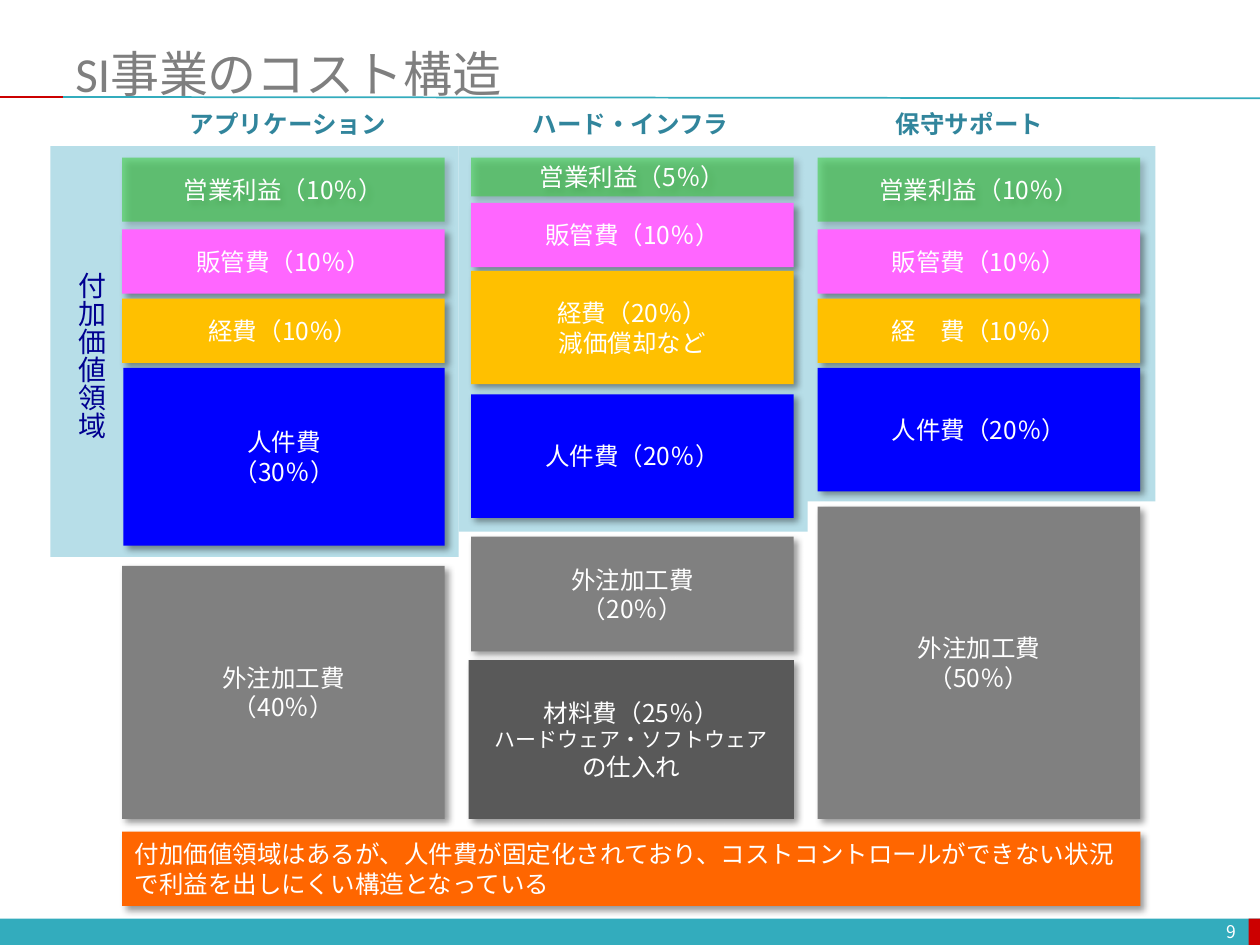
from lxml import etree
from pptx import Presentation
from pptx.dml.color import RGBColor
from pptx.enum.shapes import MSO_CONNECTOR, MSO_SHAPE
from pptx.enum.text import MSO_ANCHOR, PP_ALIGN
from pptx.oxml import parse_xml
from pptx.oxml.ns import nsdecls, qn
from pptx.util import Inches, Pt

COLOURS = {
    "teal": "33ACBD", "red": "CC0000", "region": "B7DEE8", "white": "FFFFFF",
    "title": "7F7F7F", "heading": "31859C", "navy": "000090",
    "profit": "33CC33", "admin": "FF66FF", "expense": "FFC000",
    "labour": "0000FF", "outsourcing": "808080", "material": "595959",
    "message": "FF6600",
}
JAPANESE = "Noto Sans CJK JP"
SHADOW = (
    f'<a:effectLst {nsdecls("a")}><a:outerShdw blurRad="50800" dist="38100" '
    'dir="2700000" algn="tl" rotWithShape="0"><a:srgbClr val="000000">'
    '<a:alpha val="40000"/></a:srgbClr></a:outerShdw></a:effectLst>'
)

deck = Presentation()
deck.slide_width, deck.slide_height = Inches(10), Inches(7.5)
slide = deck.slides.add_slide(deck.slide_layouts[6])
cell = deck.slide_width / 100  # the slide is a grid of 100 columns by 75 rows


def add_box(area, fill=None, shadow=False, alpha=None):
    """Add a rectangle, or a text box if there is no fill; area is in grid cells."""
    area = [round(value * cell) for value in area]
    if fill is None:
        return slide.shapes.add_textbox(*area)
    box = slide.shapes.add_shape(MSO_SHAPE.RECTANGLE, *area)
    box.fill.solid()
    box.fill.fore_color.rgb = RGBColor.from_string(COLOURS[fill])
    box.line.fill.background()
    box.shadow.inherit = False
    properties = box.element.spPr
    if shadow:
        properties.replace(properties.find(qn("a:effectLst")), parse_xml(SHADOW))
    if alpha:
        colour = properties.find(qn("a:solidFill"))[0]
        etree.SubElement(colour, qn("a:alpha"), val=str(alpha * 1000))
    return box


def write(box, lines, colour="white", align=PP_ALIGN.CENTER,
          anchor=MSO_ANCHOR.MIDDLE, wrap=True, **font_format):
    """Write one paragraph per line; a line is a text or a (text, size) pair."""
    frame = box.text_frame
    frame.word_wrap, frame.vertical_anchor = wrap, anchor
    for index, line in enumerate(lines):
        text, size = line if isinstance(line, tuple) else (line, 14)
        paragraph = frame.paragraphs[0] if index == 0 else frame.add_paragraph()
        paragraph.alignment = align
        run = paragraph.add_run()
        run.text = text
        run.font.color.rgb = RGBColor.from_string(COLOURS[colour])
        for name, value in {"name": JAPANESE, "size": Pt(size), **font_format}.items():
            setattr(run.font, name, value)
        etree.SubElement(run.font._element, qn("a:ea"), typeface=JAPANESE)


# Footer band and title rules
add_box((0, 72.9, 100, 2.2), "teal")
add_box((99.1, 72.9, 1, 2.2), "red")
for start, end, end_row, colour in ((5, 100, 7.8, "teal"), (0, 5, 7.7, "red")):
    ends = [round(value * cell) for value in (start, 7.7, end, end_row)]
    rule = slide.shapes.add_connector(MSO_CONNECTOR.STRAIGHT, *ends)
    rule.line.color.rgb = RGBColor.from_string(COLOURS[colour])
    rule.line.width = Pt(1)
    etree.SubElement(rule._element.spPr, qn("a:effectLst"))

# Value-added region behind the three columns
for left, width, height in ((4, 32.4, 32.6), (36.4, 27.7, 30.6), (64, 27.7, 28.2)):
    add_box((left, 11.6, width, height), "region")

# Title and page number
write(add_box((75.8, 72.7, 23.3, 2.4)), [("9", 10)], align=PP_ALIGN.RIGHT)
write(add_box((5, 3, 95, 4.6)), [("SI事業のコスト構造", 28)], "title",
      align=PP_ALIGN.LEFT, anchor=MSO_ANCHOR.TOP, name="Calibri")

# Cost columns: heading, heading area, left edge, then
# (kind, top row, height, lines, optional shift of the left edge)
cost_columns = [
    ("アプリケーション", (14, 17.7), 9.7, [
        ("profit", 12.5, 5.1, ["営業利益（10％）"]),
        ("admin", 18.2, 5.1, ["販管費（10％）"]),
        ("expense", 23.7, 5.1, ["経費（10％）"]),
        ("labour", 29.2, 14.1, ["人件費", "（30％）"], 0.1),
        ("outsourcing", 44.9, 20.1, ["外注加工費", "（40％）"]),
    ]),
    ("ハード・インフラ", (41.2, 17.7), 37.4, [
        ("profit", 12.5, 3.1, ["営業利益（5％）"]),
        ("admin", 16.1, 5.1, ["販管費（10％）"]),
        ("expense", 21.5, 9, ["経費（20％）", "減価償却など"]),
        ("labour", 31.3, 9.8, ["人件費（20％）"]),
        ("outsourcing", 42.6, 9.1, ["外注加工費", "（20％）"]),
        ("material", 52.4, 12.6,
         ["材料費（25％）", ("ハードウェア・ソフトウェア", 12), "の仕入れ"], -0.2),
    ]),
    ("保守サポート", (69.9, 14.1), 64.9, [
        ("profit", 12.5, 5.1, ["営業利益（10％）"]),
        ("admin", 18.2, 5.1, ["販管費（10％）"]),
        ("expense", 23.7, 5.1, ["経　費（10％）"]),
        ("labour", 29.2, 9.8, ["人件費（20％）"]),
        ("outsourcing", 40.2, 24.8, ["外注加工費", "（50％）"]),
    ]),
]
for heading, (heading_left, heading_width), column_left, costs in cost_columns:
    write(add_box((heading_left, 8.2, heading_width, 3.4)), [heading], "heading",
          anchor=MSO_ANCHOR.TOP, wrap=False, bold=True)
    for kind, top, height, lines, *shift in costs:
        offset = sum(shift)
        cost = add_box((column_left + offset, top, 25.6 - offset, height), kind,
                       shadow=True, alpha=53 if kind == "profit" else None)
        write(cost, lines, wrap=kind != "material")

# Vertical label of the value-added region
region_label = add_box((4.4, 20.6, 4.7, 14.5))
write(region_label, [("付加価値領域", 16)], "navy", align=PP_ALIGN.LEFT,
      anchor=MSO_ANCHOR.TOP, wrap=False)
region_label.text_frame._txBody.bodyPr.set("vert", "eaVert")

# Key message
write(add_box((9.7, 66, 80.8, 5.9), "message", shadow=True),
      ["付加価値領域はあるが、人件費が固定化されており、"
       "コストコントロールができない状況で利益を出しにくい構造となっている"],
      align=PP_ALIGN.LEFT)

deck.save("out.pptx")
